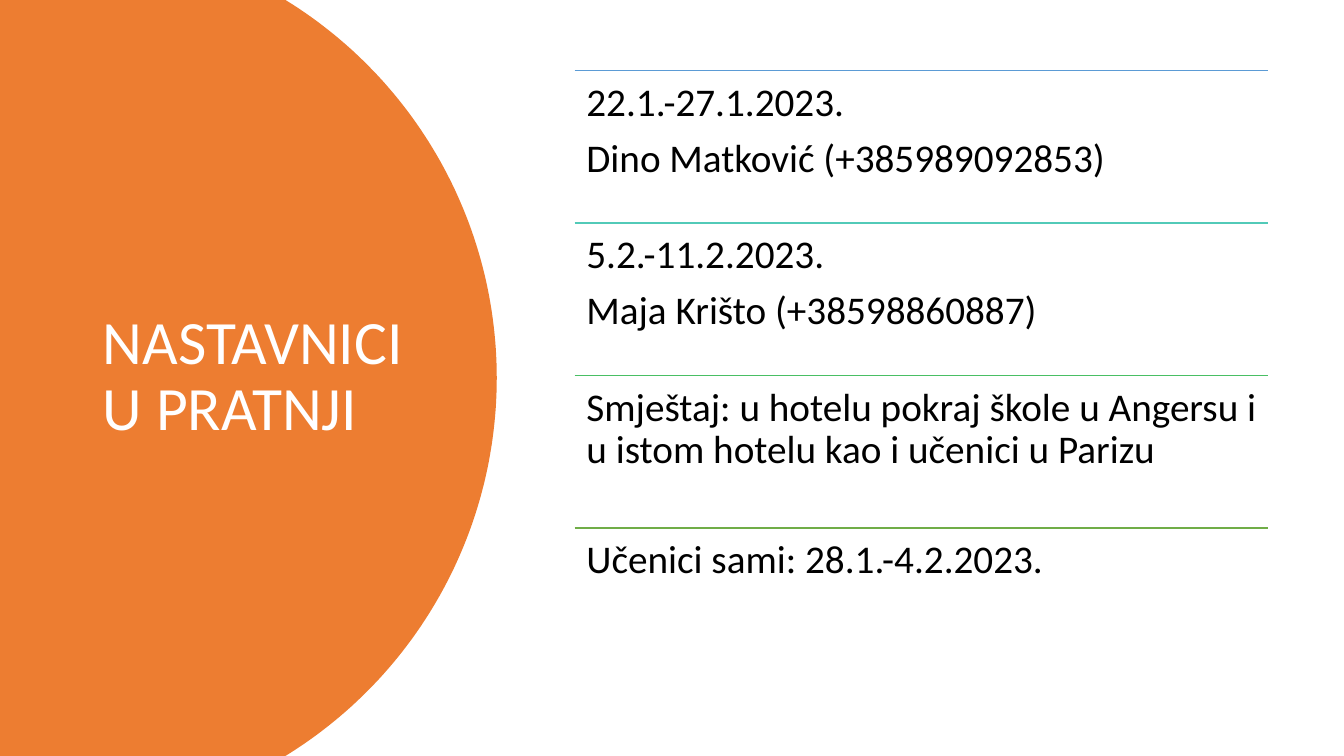
"""Builds a slide on accompanying teachers: title on an orange arc, four ruled rows."""
from math import asin, cos, sin

from lxml import etree
from pptx import Presentation
from pptx.dml.color import RGBColor
from pptx.enum.shapes import MSO_CONNECTOR
from pptx.enum.text import MSO_ANCHOR
from pptx.oxml.ns import qn
from pptx.util import Cm, Pt

STRAIGHT = MSO_CONNECTOR.STRAIGHT
TOP, MIDDLE = MSO_ANCHOR.TOP, MSO_ANCHOR.MIDDLE

ORANGE = RGBColor(0xED, 0x7D, 0x31)
WHITE = RGBColor(0xFF, 0xFF, 0xFF)
BLACK = RGBColor(0x00, 0x00, 0x00)
BLUE = RGBColor(0x5B, 0x9B, 0xD5)
TEAL = RGBColor(0x52, 0xCA, 0xB8)
MINT = RGBColor(0x49, 0xBF, 0x64)
GREEN = RGBColor(0x70, 0xAD, 0x47)

SLIDE_WIDTH, SLIDE_HEIGHT = 33.87, 19.05
ARC_CENTER_X, ARC_RADIUS, ARC_STEPS = 1.34, 11.18, 120
ROW_LEFT, ROW_TOP, ROW_WIDTH, ROW_HEIGHT = 14.48, 1.78, 17.48, 3.84

ROWS = [
    (BLUE, ["22.1.-27.1.2023.", "Dino Matković (+385989092853)"]),
    (TEAL, ["5.2.-11.2.2023.", "Maja Krišto (+38598860887)"]),
    (MINT, ["Smještaj: u hotelu pokraj škole u Angersu i u istom hotelu kao i učenici u Parizu"]),
    (GREEN, ["Učenici sami: 28.1.-4.2.2023."]),
]

presentation = Presentation()
presentation.slide_width = Cm(SLIDE_WIDTH)
presentation.slide_height = Cm(SLIDE_HEIGHT)
slide = presentation.slides.add_slide(presentation.slide_layouts[6])


def add_text(lines, left, top, width, height, *, size, color, anchor=TOP,
             inset_x=0.3, inset_y=0.3, space_after=0):
    frame = slide.shapes.add_textbox(Cm(left), Cm(top), Cm(width), Cm(height)).text_frame
    frame.word_wrap = True
    frame.vertical_anchor = anchor
    frame.margin_left = frame.margin_right = Cm(inset_x)
    frame.margin_top = frame.margin_bottom = Cm(inset_y)
    frame.text = "\n".join(lines)
    for paragraph in frame.paragraphs:
        paragraph.line_spacing = 0.9
        paragraph.space_after = Pt(space_after)
        font = paragraph.runs[0].font
        font.name = "Calibri"
        font.size = Pt(size)
        font.color.rgb = color


half_height = SLIDE_HEIGHT / 2
half_angle = asin(half_height / ARC_RADIUS)
angles = [half_angle * (2 * step / ARC_STEPS - 1) for step in range(ARC_STEPS + 1)]
arc_points = [
    (Cm(ARC_CENTER_X + ARC_RADIUS * cos(angle)), Cm(half_height + ARC_RADIUS * sin(angle)))
    for angle in angles
]
outline = slide.shapes.build_freeform(0, 0)
outline.add_line_segments(arc_points + [(0, Cm(SLIDE_HEIGHT))], close=True)
title_panel = outline.convert_to_shape()
title_panel.shadow.inherit = False
title_panel.fill.solid()
title_panel.fill.fore_color.rgb = ORANGE
title_panel.line.fill.background()

add_text(["NASTAVNICI U PRATNJI"], 2.34, ROW_TOP, 8.2, 15.47, size=44, color=WHITE,
         anchor=MIDDLE, inset_x=0.25, inset_y=0.13)

for index, (rule_color, lines) in enumerate(ROWS):
    row_top = ROW_TOP + index * ROW_HEIGHT
    rule = slide.shapes.add_connector(
        STRAIGHT, Cm(ROW_LEFT), Cm(row_top), Cm(ROW_LEFT + ROW_WIDTH), Cm(row_top))
    rule.line.color.rgb = rule_color
    rule.line.width = Pt(1)
    etree.SubElement(rule._element.spPr, qn("a:effectLst"))
    add_text(lines, ROW_LEFT, row_top, ROW_WIDTH, ROW_HEIGHT, size=28, color=BLACK,
             space_after=9.8)

presentation.save("out.pptx")
